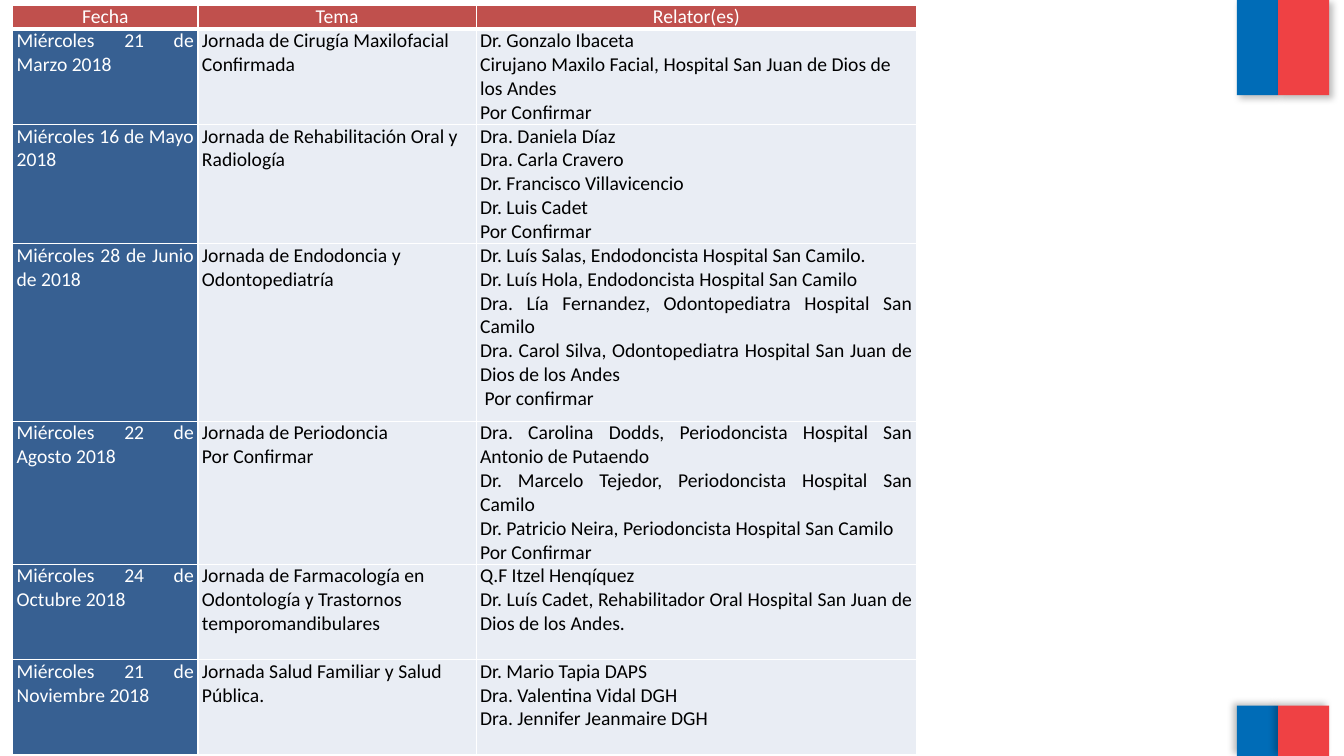
from lxml import etree
from pptx import Presentation
from pptx.dml.color import RGBColor
from pptx.enum.shapes import MSO_SHAPE
from pptx.enum.text import PP_ALIGN
from pptx.oxml.ns import qn
from pptx.util import Cm, Pt

LEFT, CENTER, JUSTIFY = PP_ALIGN.LEFT, PP_ALIGN.CENTER, PP_ALIGN.JUSTIFY
RECT = MSO_SHAPE.RECTANGLE

# Content
HEADERS = ["Fecha", "Tema", "Relator(es)"]
# date, topic lines, speaker lines, speaker alignment, row height in cm
SESSIONS = [
    ("Miércoles 21 de Marzo 2018",
     ["Jornada de Cirugía Maxilofacial Confirmada"],
     ["Dr. Gonzalo Ibaceta",
      "Cirujano Maxilo Facial, Hospital San Juan de Dios de los Andes",
      "Por Confirmar"], LEFT, 2.4),
    ("Miércoles 16 de Mayo 2018",
     ["Jornada de Rehabilitación Oral y Radiología"],
     ["Dra. Daniela Díaz", "Dra. Carla Cravero", "Dr. Francisco Villavicencio",
      "Dr. Luis Cadet", "Por Confirmar"], JUSTIFY, 3.0),
    ("Miércoles 28 de Junio de 2018",
     ["Jornada de Endodoncia y Odontopediatría"],
     ["Dr. Luís Salas, Endodoncista Hospital San Camilo.",
      "Dr. Luís Hola, Endodoncista Hospital San Camilo",
      "Dra. Lía Fernandez, Odontopediatra Hospital San Camilo",
      "Dra. Carol Silva, Odontopediatra Hospital San Juan de Dios de los Andes",
      " Por confirmar"], JUSTIFY, 4.47),
    ("Miércoles 22 de Agosto 2018",
     ["Jornada de Periodoncia", "Por Confirmar"],
     ["Dra. Carolina Dodds, Periodoncista Hospital San Antonio de Putaendo",
      "Dr. Marcelo Tejedor, Periodoncista Hospital San Camilo",
      "Dr. Patricio Neira, Periodoncista Hospital San Camilo",
      "Por Confirmar"], JUSTIFY, 3.6),
    ("Miércoles 24 de Octubre 2018",
     ["Jornada de Farmacología en Odontología y Trastornos temporomandibulares"],
     ["Q.F Itzel Henqíquez",
      "Dr. Luís Cadet, Rehabilitador Oral Hospital San Juan de Dios de los Andes."],
     JUSTIFY, 2.4),
    ("Miércoles 21 de Noviembre 2018",
     ["Jornada Salud Familiar y Salud Pública."],
     ["Dr. Mario Tapia DAPS", "Dra. Valentina Vidal DGH",
      "Dra. Jennifer Jeanmaire DGH"], JUSTIFY, 2.4),
]
COLORS = {"blue": "006CB7", "red": "EF4144", "header": "C0504D", "date": "376092",
          "body": "E9EDF4", "white": "FFFFFF", "black": "000000"}

# Layout in cm
TABLE_LEFT, TABLE_TOP = 0.32, 0.13
COL_WIDTHS = [4.67, 7.01, 11.1]
HEADER_HEIGHT = 0.6
BANDS = [("blue", 31.17, 1.04), ("red", 32.21, 1.29)]  # colour, left, width
BAND_ROWS = [(0, 2.4, 45), (17.78, 1.27, 215)]  # top, height, shadow angle


def rgb(name):
    return RGBColor.from_string(COLORS[name])


def add_shadow(sp, angle):
    effects = etree.SubElement(sp._element.spPr, qn("a:effectLst"))
    shadow = etree.SubElement(effects, qn("a:outerShdw"), blurRad=str(Pt(5)),
                              dist=str(Pt(3)), dir=str(angle * 60000), rotWithShape="0")
    color = etree.SubElement(shadow, qn("a:srgbClr"), val=COLORS["black"])
    etree.SubElement(color, qn("a:alpha"), val="25000")


def add_borders(cell, bottom):
    tc_pr = cell._tc.get_or_add_tcPr()
    for side, width in (("L", 1), ("R", 1), ("T", 1), ("B", bottom)):
        line = etree.SubElement(tc_pr, qn(f"a:ln{side}"), w=str(Pt(width)))
        fill = etree.SubElement(line, qn("a:solidFill"))
        etree.SubElement(fill, qn("a:srgbClr"), val=COLORS["white"])


def fill_cell(cell, lines, align, fill, color, bottom=1):
    add_borders(cell, bottom)
    cell.fill.solid()
    cell.fill.fore_color.rgb = rgb(fill)
    cell.margin_left = cell.margin_right = Cm(0.1)
    cell.margin_top = cell.margin_bottom = 0
    cell.text = "\n".join(lines)
    for p in cell.text_frame.paragraphs:
        p.alignment = align
        p.font.name, p.font.size, p.font.bold = "Calibri", Pt(14), False
        p.font.color.rgb = rgb(color)


prs = Presentation()
prs.slide_width, prs.slide_height = Cm(33.87), Cm(19.05)
s = prs.slides.add_slide(prs.slide_layouts[6])

# Blue and red bands in the right corners
for top, height, angle in BAND_ROWS:
    for color, left, width in BANDS:
        sp = s.shapes.add_shape(RECT, Cm(left), Cm(top), Cm(width), Cm(height))
        sp.fill.solid()
        sp.fill.fore_color.rgb = rgb(color)
        sp.line.fill.background()
        add_shadow(sp, angle)

# Schedule table
heights = [HEADER_HEIGHT] + [session[-1] for session in SESSIONS]
table = s.shapes.add_table(len(heights), len(HEADERS), Cm(TABLE_LEFT), Cm(TABLE_TOP),
                           Cm(sum(COL_WIDTHS)), Cm(sum(heights))).table
table.horz_banding = False
for column, width in zip(table.columns, COL_WIDTHS):
    column.width = Cm(width)
for row, height in zip(table.rows, heights):
    row.height = Cm(height)

for c, header in enumerate(HEADERS):
    fill_cell(table.cell(0, c), [header], CENTER, "header", "white", bottom=3)
for r, (date, topic, speakers, align, _) in enumerate(SESSIONS, 1):
    fill_cell(table.cell(r, 0), [date], JUSTIFY, "date", "white")
    fill_cell(table.cell(r, 1), topic, LEFT, "body", "black")
    fill_cell(table.cell(r, 2), speakers, align, "body", "black")

prs.save("out.pptx")
